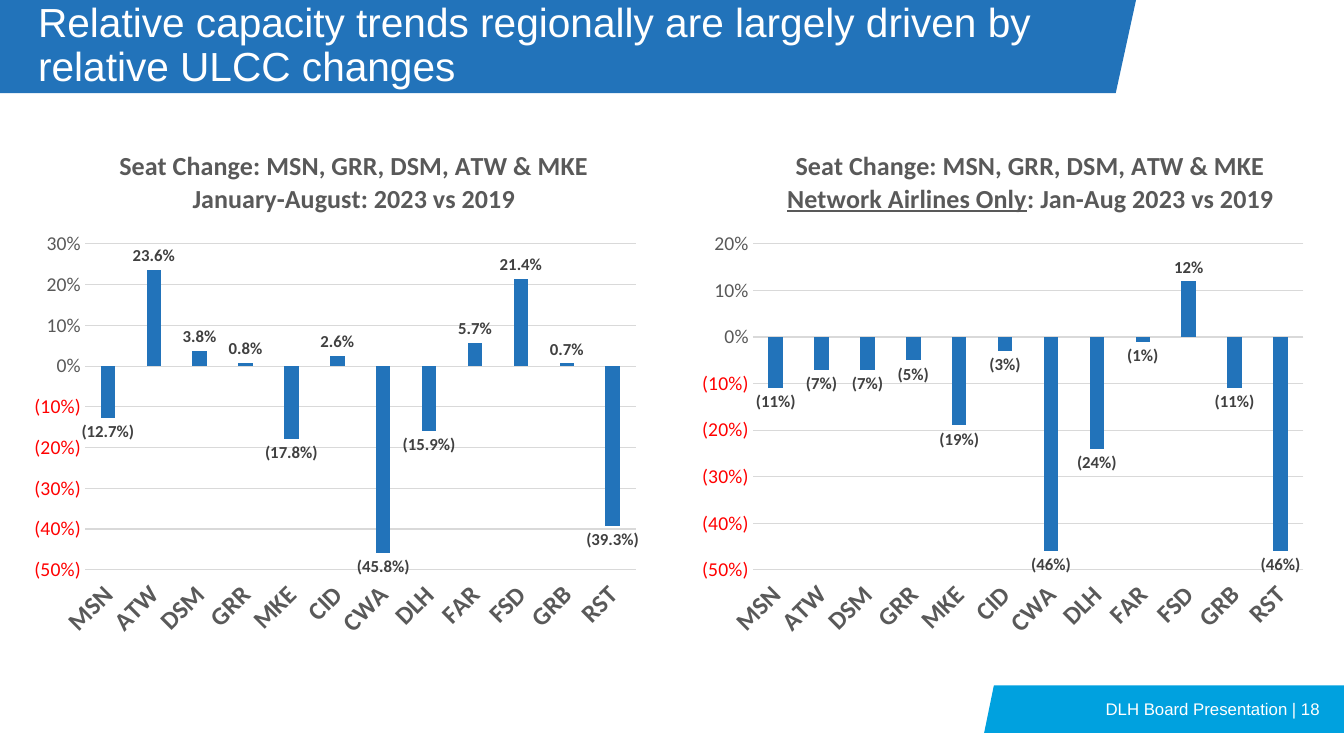
from dataclasses import dataclass

import pptx
import pptx.chart.data
import pptx.dml.color
import pptx.enum.chart
import pptx.enum.text
import pptx.util
from lxml import etree

Pt = pptx.util.Pt
RGBColor = pptx.dml.color.RGBColor


@dataclass(frozen=True)
class Theme:
    blue: str = "2273BA"
    cyan: str = "00A1DF"
    white: str = "FFFFFF"
    gray: str = "595959"
    label: str = "404040"
    grid: str = "D9D9D9"
    text_font: str = "Arial"
    chart_font: str = "Calibri"
    title_size: float = 29
    chart_title_size: float = 18.6
    category_size: float = 18
    value_size: float = 14
    small_size: float = 12


THEME = Theme()
AIRPORTS = ["MSN", "ATW", "DSM", "GRR", "MKE", "CID", "CWA", "DLH", "FAR", "FSD", "GRB", "RST"]
SEAT_CHANGE = [-0.127, 0.236, 0.038, 0.008, -0.178, 0.026,
               -0.458, -0.159, 0.057, 0.214, 0.007, -0.393]
NETWORK_CHANGE = [-0.11, -0.07, -0.07, -0.05, -0.19, -0.03,
                  -0.46, -0.24, -0.01, 0.12, -0.11, -0.46]
HEADING = "Seat Change: MSN, GRR, DSM, ATW & MKE"


def style_font(font, size, color, name, bold=False):
    font.size = Pt(size)
    font.color.rgb = RGBColor.from_string(color)
    font.name = name
    font.bold = bold


def add_band(slide, points, color):
    corners = [(Pt(x), Pt(y)) for x, y in points]
    builder = slide.shapes.build_freeform(*corners[0], scale=1.0)
    builder.add_line_segments(corners[1:], close=True)
    shape = builder.convert_to_shape()
    shape.shadow.inherit = False
    shape.fill.solid()
    shape.fill.fore_color.rgb = RGBColor.from_string(color)
    shape.line.fill.background()


def add_header(slide, left, top, width, height, text):
    slant = 14.5
    add_band(slide, [(left, top), (left + width, top),
                     (left + width - slant, top + height), (left, top + height)], THEME.blue)
    title = slide.shapes.title
    title.element.getparent().append(title.element)
    title.left, title.top, title.width, title.height = Pt(left + 20), Pt(top), Pt(793), Pt(66)
    frame = title.text_frame
    frame.text = text
    frame.word_wrap = True
    frame.auto_size = pptx.enum.text.MSO_AUTO_SIZE.NONE
    frame.vertical_anchor = pptx.enum.text.MSO_ANCHOR.MIDDLE
    paragraph = frame.paragraphs[0]
    paragraph.alignment = pptx.enum.text.PP_ALIGN.LEFT
    paragraph.line_spacing = 0.9
    style_font(paragraph.runs[0].font, THEME.title_size, THEME.white, THEME.text_font)


def add_footer(slide, left, top, width, height, text):
    slant = 7
    add_band(slide, [(left + slant, top), (left + width, top),
                     (left + width, top + height), (left, top + height)], THEME.cyan)
    shape = slide.shapes.add_textbox(Pt(left + 32), Pt(top), Pt(width - 42), Pt(height))
    frame = shape.text_frame
    frame.text = text
    frame.word_wrap = True
    frame.vertical_anchor = pptx.enum.text.MSO_ANCHOR.MIDDLE
    paragraph = frame.paragraphs[0]
    paragraph.alignment = pptx.enum.text.PP_ALIGN.RIGHT
    style_font(paragraph.runs[0].font, THEME.small_size, THEME.white, THEME.text_font)


def set_layout(parent, position, **settings):
    for old in parent.findall(pptx.oxml.ns.qn("c:layout")):
        parent.remove(old)
    layout = etree.Element(pptx.oxml.ns.qn("c:layout"))
    manual = etree.SubElement(layout, pptx.oxml.ns.qn("c:manualLayout"))
    for name, value in settings.items():
        etree.SubElement(manual, pptx.oxml.ns.qn(f"c:{name}")).set("val", str(value))
    parent.insert(position, layout)


def format_chart_title(chart, lines):
    frame = chart.chart_title.text_frame
    for index, line in enumerate(lines):
        paragraph = frame.add_paragraph() if index else frame.paragraphs[0]
        for text, underlined in line:
            run = paragraph.add_run()
            run.text = text
            style_font(run.font, THEME.chart_title_size, THEME.gray, THEME.chart_font, True)
            run.font.underline = underlined
    chart.chart_title.include_in_layout = False
    title = chart.chart_title.element if hasattr(chart.chart_title, "element") else chart.chart_title._title
    set_layout(title, 1, xMode="edge", yMode="edge", x=0.15, y=0.03)


def format_axes(chart, maximum):
    no_tick = pptx.enum.chart.XL_TICK_MARK.NONE
    category, value = chart.category_axis, chart.value_axis
    for axis in (category, value):
        axis.major_tick_mark = axis.minor_tick_mark = no_tick
    category.tick_label_position = pptx.enum.chart.XL_TICK_LABEL_POSITION.LOW
    style_font(category.tick_labels.font, THEME.category_size, THEME.gray, THEME.chart_font, True)
    body = category._element.find(".//" + pptx.oxml.ns.qn("a:bodyPr"))
    body.set("rot", "-2700000")
    body.set("vert", "horz")
    value.minimum_scale, value.maximum_scale, value.major_unit = -0.5, maximum, 0.1
    value.tick_labels.number_format = r"0%;[Red]\(0%\)"
    value.tick_labels.number_format_is_linked = False
    style_font(value.tick_labels.font, THEME.value_size, THEME.gray, THEME.chart_font)
    value.format.line.fill.background()
    for line in (category.format.line, value.major_gridlines.format.line):
        line.color.rgb = RGBColor.from_string(THEME.grid)
        line.width = Pt(0.75)


def add_seat_chart(slide, left, top, width, height, lines, values, maximum, label_format):
    data = pptx.chart.data.CategoryChartData(number_format="0.0%")
    data.categories = AIRPORTS
    data.add_series("Series 1", values)
    chart = slide.shapes.add_chart(
        pptx.enum.chart.XL_CHART_TYPE.COLUMN_CLUSTERED,
        Pt(left), Pt(top), Pt(width), Pt(height), data).chart
    chart.has_legend = False
    chart.font.name = THEME.chart_font
    chart.font.size = Pt(10)
    format_chart_title(chart, lines)
    format_axes(chart, maximum)
    plot = chart.plots[0]
    plot.gap_width, plot.overlap, plot.vary_by_categories = 219, -27, False
    series = plot.series[0]
    series.invert_if_negative = False
    series.format.fill.solid()
    series.format.fill.fore_color.rgb = RGBColor.from_string(THEME.blue)
    labels = series.data_labels
    labels.show_value = True
    labels.position = pptx.enum.chart.XL_LABEL_POSITION.OUTSIDE_END
    labels.number_format = label_format
    labels.number_format_is_linked = False
    style_font(labels.font, THEME.small_size, THEME.label, THEME.chart_font, True)
    plot_area = chart.element.find(".//" + pptx.oxml.ns.qn("c:plotArea"))
    set_layout(plot_area, 0, layoutTarget="inner", xMode="edge", yMode="edge",
               x=0.1, y=0.22, w=0.88, h=0.63)


def main():
    presentation = pptx.Presentation()
    presentation.slide_width, presentation.slide_height = Pt(960), Pt(540)
    slide = presentation.slides.add_slide(presentation.slide_layouts[5])
    add_header(slide, 0, 0, 811.5, 66.5,
               "Relative capacity trends regionally are largely driven by relative ULCC changes")
    add_seat_chart(slide, 16, 93, 447, 369.5,
                   [[(HEADING, False)], [("January-August: 2023 vs 2019", False)]],
                   SEAT_CHANGE, 0.3, r"0.0%;\(0.0%\)")
    add_footer(slide, 703, 489.5, 257, 34, "DLH Board Presentation | 18")
    add_seat_chart(slide, 493, 93, 447, 369.5,
                   [[(HEADING, False)],
                    [("Network Airlines Only", True), (": Jan-Aug 2023 vs 2019", False)]],
                   NETWORK_CHANGE, 0.2, r"0%;\(0%\)")
    presentation.save("out.pptx")


if __name__ == "__main__":
    main()
